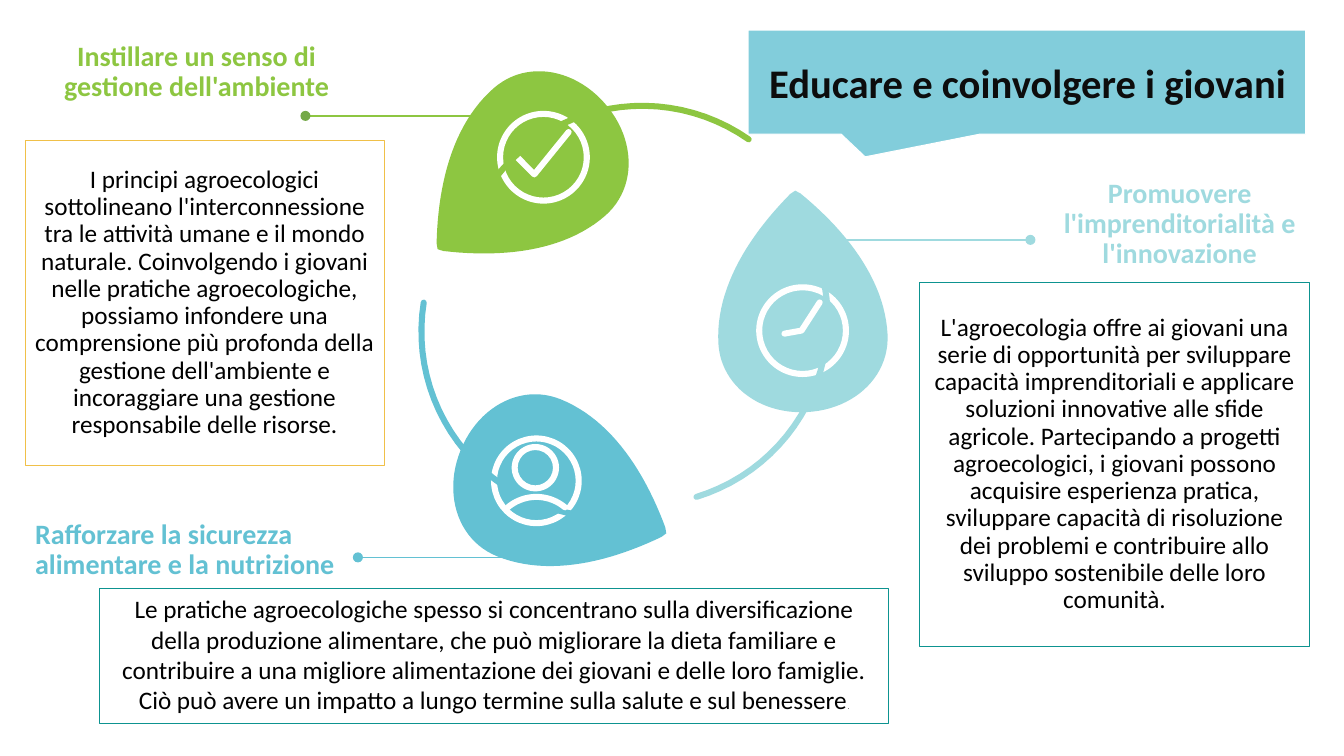
"""Builds a slide on educating and involving young people in agroecology."""
from math import cos, radians, sin

from lxml import etree
from pptx import Presentation
from pptx.dml.color import RGBColor
from pptx.enum.shapes import MSO_CONNECTOR, MSO_SHAPE
from pptx.enum.text import MSO_ANCHOR, PP_ALIGN
from pptx.oxml.ns import qn
from pptx.util import Inches, Pt

GREEN, BLUE, AQUA, TEAL = "8DC641", "63C1D3", "9FDADF", "0D9390"
WHITE, BLACK, YELLOW = "FFFFFF", "000000", "F0C049"
LEFT, CENTER = PP_ALIGN.LEFT, PP_ALIGN.CENTER
TOP, MIDDLE = MSO_ANCHOR.TOP, MSO_ANCHOR.MIDDLE
STEPS = 24


def paint(shape, fill=None, line=None, width=0.75):
    shape.shadow.inherit = False
    if fill:
        shape.fill.solid()
        shape.fill.fore_color.rgb = RGBColor.from_string(fill)
    else:
        shape.fill.background()
    if line:
        shape.line.color.rgb = RGBColor.from_string(line)
        shape.line.width = Pt(width)
    else:
        shape.line.fill.background()


def trace(points, close):
    corners = [(Inches(x), Inches(y)) for x, y in points]
    builder = slide.shapes.build_freeform(*corners[0])
    builder.add_line_segments(corners[1:], close=close)
    return builder.convert_to_shape()


prs = Presentation()
prs.slide_width, prs.slide_height = Inches(13.33), Inches(7.5)
slide = prs.slides.add_slide(prs.slide_layouts[6])

callout = slide.shapes.add_shape(MSO_SHAPE.ROUNDED_RECTANGULAR_CALLOUT, Inches(7.42), Inches(0.3),
                                 Inches(5.53), Inches(1.03))
for index, value in enumerate((-0.29, 0.72, 0)):
    callout.adjustments[index] = value
paint(callout, BLUE, WHITE)
callout_color = callout.element.spPr.find(qn("a:solidFill")).find(qn("a:srgbClr"))
etree.SubElement(callout_color, qn("a:alpha")).set("val", "80000")

half_leaf = []
for a, b, c, d in (((-0.81, 0), (-0.81, 0.47), (-0.5, 0.84), (-0.08, 0.84)),
                   ((-0.08, 0.84), (0.45, 0.84), (0.95, 0.5), (1.36, 0.05))):
    for step in range(STEPS):
        t = step / (STEPS - 1)
        u = 1 - t
        half_leaf.append([u**3 * a[k] + 3 * u * u * t * b[k] + 3 * u * t * t * c[k] + t**3 * d[k]
                          for k in (0, 1)])
leaf_outline = half_leaf + [(1.39, 0)] + [(along, -across) for along, across in half_leaf[::-1]]

leaves = [
    (AQUA, 7.96, 3.28, -93, 0.92),
    (GREEN, 5.39, 1.56, 139, 0.92),
    (BLUE, 5.32, 4.77, 22, 0.9),
]
for color, center_x, center_y, tip_angle, _ in leaves:
    ux, uy = cos(radians(tip_angle)), sin(radians(tip_angle))
    leaf = trace([(center_x + along * ux - across * uy, center_y + along * uy + across * ux)
                  for along, across in leaf_outline], close=True)
    paint(leaf, color)

head = (WHITE, 5.31, 4.64, 0, 0.47)
for _, center_x, center_y, _, size in leaves + [head]:
    ring = slide.shapes.add_shape(MSO_SHAPE.DONUT, Inches(center_x - size / 2),
                                  Inches(center_y - size / 2), Inches(size), Inches(size))
    ring.adjustments[0] = 0.06 / size
    paint(ring, WHITE)

arcs = [
    (AQUA, 6.37, 3.17, 1.84, -18, 91),
    (GREEN, 6.37, 2.89, 1.84, 214, 91),
    (BLUE, 6.02, 3.29, 1.84, 98, 91),
    (WHITE, 5.32, 5.37, 0.44, 230, 80),
]
clock_hands = [(7.78, 3.31), (7.95, 3.28), (8.13, 3)]
check_mark = [(5.13, 1.56), (5.3, 1.73), (5.64, 1.31)]
strokes = [(WHITE, clock_hands), (WHITE, check_mark)]
for color, center_x, center_y, radius, start_angle, sweep in arcs:
    angles = [radians(start_angle + sweep * step / STEPS) for step in range(STEPS + 1)]
    strokes.append((color, [(center_x + radius * cos(angle), center_y + radius * sin(angle))
                            for angle in angles]))
for color, points in strokes:
    stroke = trace(points, close=False)
    paint(stroke, line=color, width=4.3)
    stroke.element.spPr.find(qn("a:ln")).set("cap", "rnd")

pointers = [
    (5.08, 3.03, 1.15, GREEN, "75A949"),
    (5.6, 3.55, 5.53, BLUE, BLUE),
    (8.18, 10.22, 2.38, AQUA, AQUA),
]
for start_x, end_x, y, color, dot_color in pointers:
    pointer = slide.shapes.add_connector(MSO_CONNECTOR.STRAIGHT, Inches(start_x), Inches(y),
                                         Inches(end_x), Inches(y))
    pointer.line.color.rgb = RGBColor.from_string(color)
    pointer.line.width = Pt(1)
    etree.SubElement(pointer.element.spPr, qn("a:effectLst"))
    dot = slide.shapes.add_shape(MSO_SHAPE.OVAL, Inches(end_x - 0.05), Inches(y - 0.05),
                                 Inches(0.1), Inches(0.1))
    paint(dot, dot_color)

headings = [
    ((0.25, 0.37, 3.4, 0.9), "Instillare un senso di gestione dell'ambiente",
     GREEN, 20, CENTER, 0.9, 0.05),
    ((0.25, 5.11, 3.25, 0.37), "Rafforzare la sicurezza alimentare e la nutrizione",
     BLUE, 20, LEFT, 0.9, 0.05),
    ((10.44, 1.73, 2.52, 0.37), "Promuovere l'imprenditorialità e l'innovazione",
     AQUA, 20, CENTER, 0.9, 0.05),
    ((7.53, 0.4, 5.64, 0.76), "Educare e coinvolgere i giovani",
     "0D0D0D", 29, LEFT, 1.15, 0.1),
]
for place, text, color, size, align, spacing, margin in headings:
    heading = slide.shapes.add_textbox(*[Inches(value) for value in place])
    frame = heading.text_frame
    frame.word_wrap = True
    frame.margin_top = frame.margin_bottom = Inches(margin)
    frame.text = text
    paragraph = frame.paragraphs[0]
    paragraph.alignment, paragraph.line_spacing = align, spacing
    font = paragraph.runs[0].font
    font.name, font.size, font.bold = "Calibri", Pt(size), True
    font.color.rgb = RGBColor.from_string(color)

panels = [
    ((0.25, 1.39, 3.56, 3.23), YELLOW, MIDDLE, 0.9,
     "I principi agroecologici sottolineano l'interconnessione tra le attività umane e il mondo "
     "naturale. Coinvolgendo i giovani nelle pratiche agroecologiche, possiamo infondere una "
     "comprensione più profonda della gestione dell'ambiente e incoraggiare una gestione "
     "responsabile delle risorse."),
    ((9.12, 2.8, 3.87, 3.61), TEAL, MIDDLE, 0.9,
     "L'agroecologia offre ai giovani una serie di opportunità per sviluppare capacità "
     "imprenditoriali e applicare soluzioni innovative alle sfide agricole. Partecipando a progetti "
     "agroecologici, i giovani possono acquisire esperienza pratica, sviluppare capacità di "
     "risoluzione dei problemi e contribuire allo sviluppo sostenibile delle loro comunità."),
    ((0.99, 5.84, 7.82, 1.34), TEAL, TOP, 1.0,
     "Le pratiche agroecologiche spesso si concentrano sulla diversificazione della produzione "
     "alimentare, che può migliorare la dieta familiare e contribuire a una migliore alimentazione "
     "dei giovani e delle loro famiglie. Ciò può avere un impatto a lungo termine sulla salute e "
     "sul benessere"),
]
for place, border, anchor, spacing, text in panels:
    panel = slide.shapes.add_shape(MSO_SHAPE.RECTANGLE, *[Inches(value) for value in place])
    paint(panel, line=border)
    frame = panel.text_frame
    frame.word_wrap, frame.vertical_anchor = True, anchor
    frame.text = text
    paragraph = frame.paragraphs[0]
    paragraph.alignment, paragraph.line_spacing = CENTER, spacing
    if not text.endswith("."):
        paragraph.add_run().text = "."
    for run, size in zip(paragraph.runs, (18, 4.8)):
        run.font.name, run.font.size = "Calibri", Pt(size)
        run.font.color.rgb = RGBColor.from_string(BLACK)

prs.save("out.pptx")
